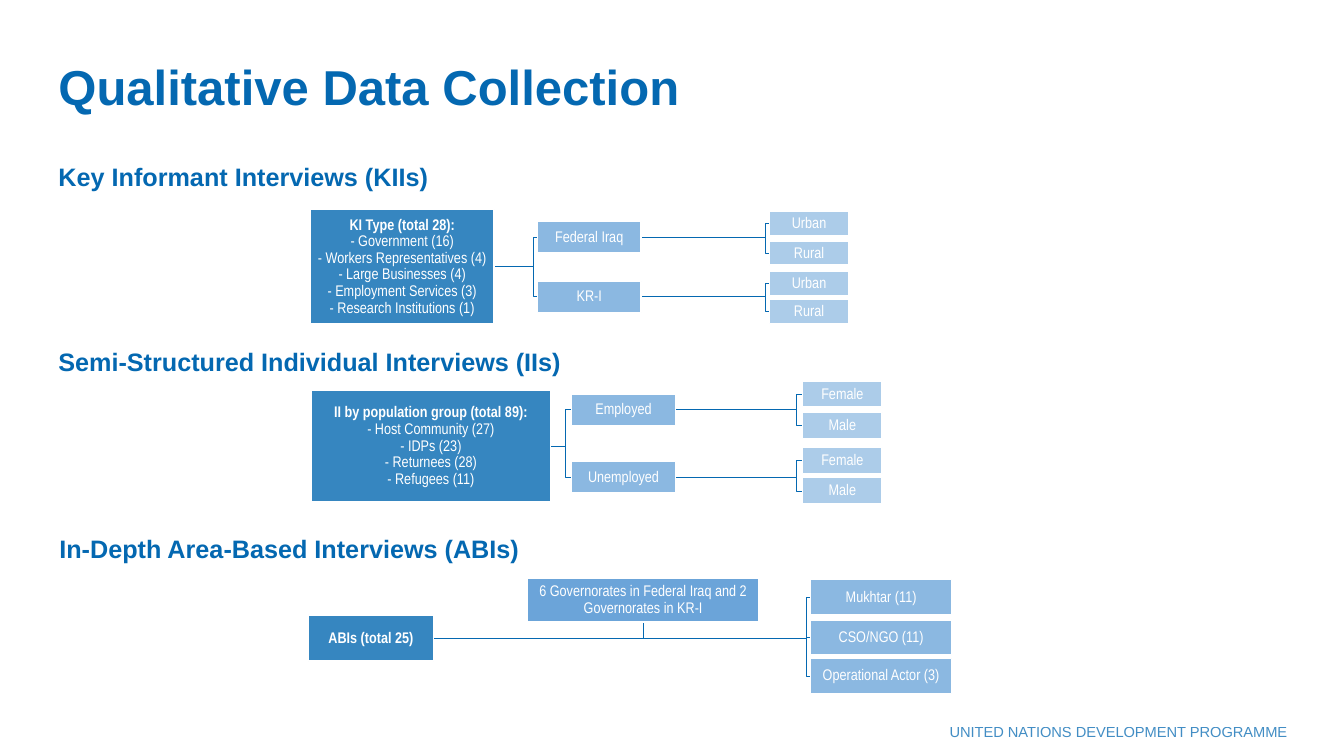
from dataclasses import dataclass

from lxml import etree
from pptx import Presentation
from pptx.dml.color import RGBColor
from pptx.enum.shapes import MSO_SHAPE
from pptx.enum.text import MSO_ANCHOR, MSO_AUTO_SIZE, PP_ALIGN
from pptx.oxml.ns import qn
from pptx.util import Inches, Pt

RECTANGLE = MSO_SHAPE.RECTANGLE
TOP, MIDDLE, BOTTOM = MSO_ANCHOR.TOP, MSO_ANCHOR.MIDDLE, MSO_ANCHOR.BOTTOM
LEFT, CENTER, RIGHT = PP_ALIGN.LEFT, PP_ALIGN.CENTER, PP_ALIGN.RIGHT
FIXED = MSO_AUTO_SIZE.NONE


@dataclass(frozen=True)
class Theme:
    heading_font: str = "Arial"
    box_font: str = "Arial Narrow"
    blue: str = "0468B1"
    white: str = "FFFFFF"
    title_size: float = 35
    heading_size: float = 18
    box_size: float = 11
    footer_size: float = 10.5
    link_width: float = 0.5
    border_width: float = 1
    root: tuple = ("0468B1", 80)
    note: tuple = ("5B9BD5", 90)
    branch: tuple = ("5B9BD5", 70)
    leaf: tuple = ("5B9BD5", 50)


@dataclass
class Node:
    lines: list
    left: float
    top: float
    width: float
    height: float
    tint: tuple
    bold: bool = False
    children: tuple = ()

    @property
    def right(self):
        return self.left + self.width

    @property
    def middle(self):
        return self.top + self.height / 2


def apply(target, formats):
    for name, value in formats.items():
        setattr(target, name, value)


def fade(element, percent):
    color = element.xpath(".//a:solidFill/a:srgbClr")[0]
    etree.SubElement(color, qn("a:alpha")).set("val", str(percent * 1000))


class SlideBuilder:
    def __init__(self, slide, theme):
        self.slide = slide
        self.theme = theme

    def wording(self, paragraph, text, font, size, color, bold=False):
        run = paragraph.add_run()
        run.text = text
        apply(run.font, {"name": font, "size": Pt(size), "bold": bold})
        run.font.color.rgb = RGBColor.from_string(color)
        return run

    def heading(self, holder, text, area, size, anchor=TOP, spacing=1.0):
        left, top, width, height = map(Inches, area)
        apply(holder, {"left": left, "top": top, "width": width, "height": height})
        apply(holder.text_frame, {"word_wrap": True, "auto_size": FIXED,
                                  "vertical_anchor": anchor})
        paragraph = holder.text_frame.paragraphs[0]
        properties = paragraph._p.get_or_add_pPr()
        apply(paragraph, {"alignment": LEFT, "line_spacing": spacing, "space_before": Pt(0)})
        properties.set("marL", "0")
        properties.set("indent", "0")
        etree.SubElement(properties, qn("a:buNone"))
        self.wording(paragraph, text, self.theme.heading_font, size, self.theme.blue, True)

    def label(self, text, area):
        holder = self.slide.shapes.add_textbox(*map(Inches, area))
        self.heading(holder, text, area, self.theme.heading_size)

    def footer(self, text, area):
        holder = self.slide.shapes.add_textbox(*map(Inches, area))
        holder.text_frame.word_wrap = True
        paragraph = holder.text_frame.paragraphs[0]
        paragraph.alignment = RIGHT
        run = self.wording(paragraph, text, self.theme.heading_font,
                           self.theme.footer_size, self.theme.blue)
        fade(run._r, 75)

    def link(self, *points):
        start, *rest = [(Inches(x), Inches(y)) for x, y in points]
        builder = self.slide.shapes.build_freeform(*start)
        builder.add_line_segments(rest, close=False)
        line = builder.convert_to_shape()
        line.shadow.inherit = False
        line.fill.background()
        line.line.color.rgb = RGBColor.from_string(self.theme.blue)
        line.line.width = Pt(self.theme.link_width)

    def box(self, node):
        theme = self.theme
        area = (node.left, node.top, node.width, node.height)
        shape = self.slide.shapes.add_shape(RECTANGLE, *map(Inches, area))
        shape.shadow.inherit = False
        color, opacity = node.tint
        shape.fill.solid()
        shape.fill.fore_color.rgb = RGBColor.from_string(color)
        fade(shape._element, opacity)
        shape.line.color.rgb = RGBColor.from_string(theme.white)
        shape.line.width = Pt(theme.border_width)
        frame = shape.text_frame
        margins = ("margin_left", "margin_top", "margin_right", "margin_bottom")
        apply(frame, dict.fromkeys(margins, Inches(0.01)))
        apply(frame, {"word_wrap": True, "vertical_anchor": MIDDLE})
        for index, text in enumerate(node.lines):
            paragraph = frame.add_paragraph() if index else frame.paragraphs[0]
            apply(paragraph, {"alignment": CENTER, "line_spacing": 0.9})
            self.wording(paragraph, text, theme.box_font, theme.box_size, theme.white,
                         node.bold and index == 0)

    def links(self, node, gap):
        for child in node.children:
            bend = child.left - gap
            self.link((node.right, node.middle), (bend, node.middle),
                      (bend, child.middle), (child.left, child.middle))
            self.links(child, gap)

    def boxes(self, node):
        self.box(node)
        for child in node.children:
            self.boxes(child)

    def tree(self, root, gap):
        self.links(root, gap)
        self.boxes(root)


def fork(text, left, top, leaf_left, leaf_tops, leaf_height, leaf_names, theme):
    leaves = [Node([name], leaf_left, leaf_top, 0.79, leaf_height, theme.leaf)
              for name, leaf_top in zip(leaf_names, leaf_tops)]
    return Node([text], left, top, 1.03, 0.31, theme.branch, children=leaves)


def main():
    deck = Presentation()
    deck.slide_width, deck.slide_height = Inches(13.33), Inches(7.5)
    theme = Theme()
    slide = deck.slides.add_slide(deck.slide_layouts[1])
    builder = SlideBuilder(slide, theme)

    builder.footer("UNITED NATIONS DEVELOPMENT PROGRAMME", (8.55, 7.12, 4.32, 0.28))
    builder.heading(slide.shapes.title, "Qualitative Data Collection",
                    (0.48, 0.1, 11.5, 1.1), theme.title_size, BOTTOM, 0.9)
    builder.heading(slide.placeholders[1], "Key Informant Interviews (KIIs)",
                    (0.48, 1.58, 11.29, 5.11), theme.heading_size, spacing=0.9)
    builder.label("Semi-Structured Individual Interviews (IIs)", (0.48, 3.39, 6.38, 0.4))
    builder.label("In-Depth Area-Based Interviews (ABIs)", (0.49, 5.24, 6.38, 0.4))

    settlements = ("Urban", "Rural")
    informants = Node(
        ["KI Type (total 28):", "- Government (16)", "- Workers Representatives (4)",
         "- Large Businesses (4)", "- Employment Services (3)",
         "- Research Institutions (1)"],
        3.08, 2.08, 1.82, 1.13, theme.root, True,
        [fork("Federal Iraq", 5.33, 2.2, 7.63, (2.1, 2.39), 0.24, settlements, theme),
         fork("KR-I", 5.33, 2.79, 7.63, (2.69, 2.97), 0.24, settlements, theme)])
    builder.tree(informants, 0.04)

    genders = ("Female", "Male")
    individuals = Node(
        ["II by population group (total 89):", "- Host Community (27)", "- IDPs (23)",
         "- Returnees (28)", "- Refugees (11)"],
        3.09, 3.87, 2.37, 1.11, theme.root, True,
        [fork("Employed", 5.67, 3.91, 7.96, (3.78, 4.09), 0.26, genders, theme),
         fork("Unemployed", 5.67, 4.58, 7.96, (4.44, 4.74), 0.26, genders, theme)])
    builder.tree(individuals, 0.06)

    actors = (("Mukhtar (11)", 5.75), ("CSO/NGO (11)", 6.15), ("Operational Actor (3)", 6.53))
    areas = Node(["ABIs (total 25)"], 3.06, 6.1, 1.24, 0.46, theme.root, True,
                 [Node([name], 8.04, top, 1.4, 0.35, theme.branch) for name, top in actors])
    coverage = Node(["6 Governorates in Federal Iraq and 2 Governorates in KR-I"],
                    5.23, 5.74, 2.3, 0.43, theme.note)
    center = coverage.left + coverage.width / 2
    builder.link((areas.right, areas.middle), (center, areas.middle),
                 (center, coverage.top + coverage.height))
    builder.tree(areas, 0.04)
    builder.box(coverage)

    deck.save("out.pptx")


if __name__ == "__main__":
    main()
